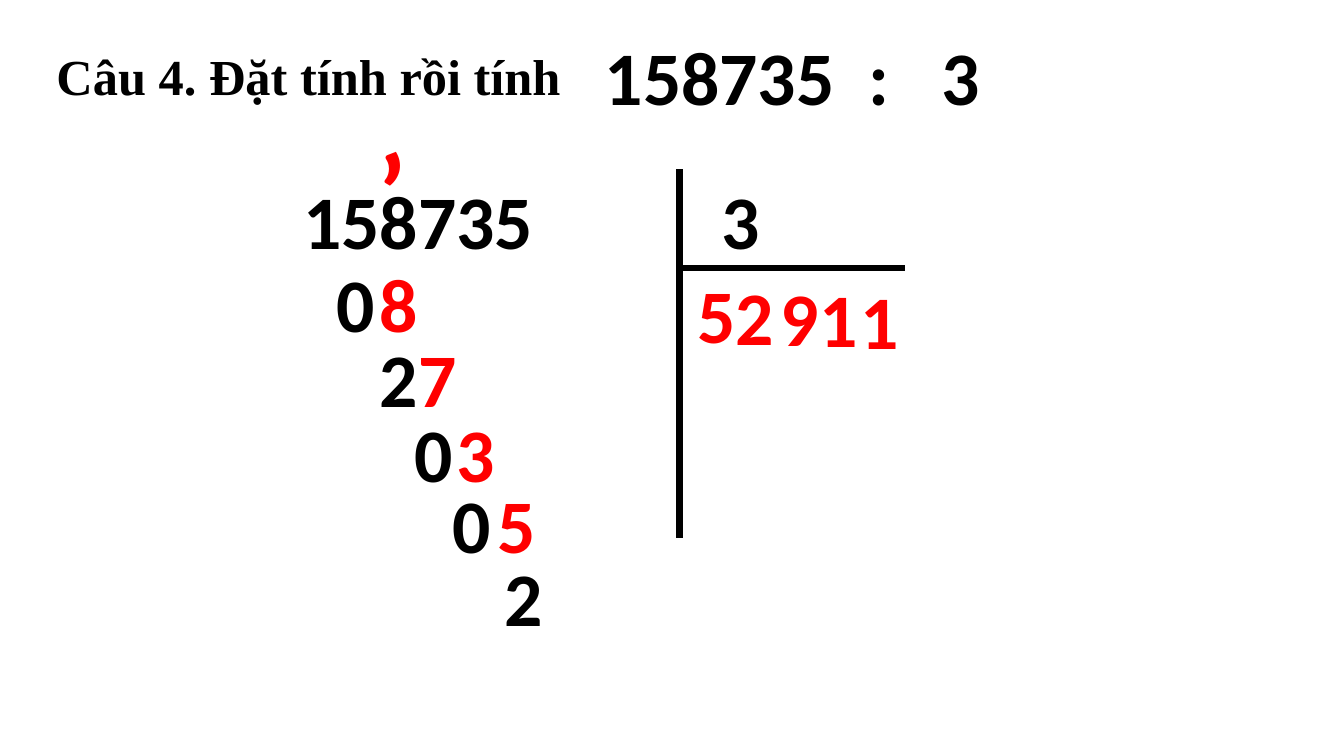
from lxml import etree
from pptx import Presentation
from pptx.dml.color import RGBColor
from pptx.enum.shapes import MSO_CONNECTOR
from pptx.enum.text import MSO_ANCHOR, MSO_AUTO_SIZE, PP_ALIGN
from pptx.oxml.ns import qn
from pptx.util import Inches, Pt

COLORS = {"ink": "000000", "answer": "FF0000"}
BODY_FONT, TITLE_FONT = "Calibri", "Times New Roman"

# Working grid: one column is one digit wide, one row is one division step
LEFT, TOP = 2.91, 2.5
COL, ROW = 0.38, 0.73
BOX_W, BOX_H = 0.74, 1.01

# Each step: row, column of remainder, remainder, column and digit brought down
STEPS = [
    (0, 0.87, "0", 2, "8"),
    (1.02, 2, "2", 3, "7"),
    (2.04, 2.9, "0", 4, "3"),
    (3, 3.9, "0", 5.08, "5"),
    (4, 5.26, "2", None, None),
]
QUOTIENT = [(10.29, "5"), (11.29, "2"), (12.45, "9"), (13.47, "1"), (14.55, "1")]


def format_runs(p, size, color, font=BODY_FONT):
    for r in p.runs:
        r.font.size, r.font.bold, r.font.name = Pt(size), True, font
        r.font.color.rgb = RGBColor.from_string(COLORS[color])


def set_tabs(p, stops):
    tabs = etree.SubElement(p._p.get_or_add_pPr(), qn("a:tabLst"))
    for stop in stops:
        etree.SubElement(tabs, qn("a:tab"), pos=str(Inches(stop)), algn="l")


def add_text(shapes, text, x, y, w=BOX_W, h=BOX_H, size=54, color="ink", tabs=()):
    sp = shapes.add_textbox(Inches(x), Inches(y), Inches(w), Inches(h))
    tf = sp.text_frame
    tf.word_wrap = True
    tf.auto_size = MSO_AUTO_SIZE.SHAPE_TO_FIT_TEXT
    p = tf.paragraphs[0]
    p.text = text
    format_runs(p, size, color)
    if tabs:
        set_tabs(p, tabs)
    return sp


def add_digit(s, digit, col, row, color="ink"):
    add_text(s.shapes, digit, LEFT + col * COL, TOP + row * ROW, color=color)


def add_rule(shapes, x1, y1, x2, y2):
    line = shapes.add_connector(MSO_CONNECTOR.STRAIGHT, *map(Inches, (x1, y1, x2, y2)))
    line.line.width = Pt(4.5)
    line.line.color.rgb = RGBColor.from_string(COLORS["ink"])
    etree.SubElement(line._element.spPr, qn("a:effectLst"))


def set_title(s, text):
    sp = s.shapes.title
    sp.left, sp.top, sp.width, sp.height = map(Inches, (0.46, 0.32, 5.44, 0.93))
    tf = sp.text_frame
    tf.text = text
    tf.word_wrap = True
    tf.auto_size = MSO_AUTO_SIZE.NONE
    tf.vertical_anchor = MSO_ANCHOR.MIDDLE
    p = tf.paragraphs[0]
    p.alignment, p.line_spacing = PP_ALIGN.LEFT, 0.9
    format_runs(p, 36, "ink", TITLE_FONT)


def add_division_frame(s):
    shapes = s.shapes.add_group_shape().shapes
    bar_x, top = 6.74, 1.68
    add_text(shapes, "158735\t3", LEFT, top, w=4.74, tabs=[4.15])
    add_rule(shapes, bar_x, top, bar_x, 5.34)
    add_rule(shapes, bar_x, 2.66, 8.98, 2.66)


def main():
    prs = Presentation()
    prs.slide_width, prs.slide_height = Inches(13.33), Inches(7.5)
    s = prs.slides.add_slide(prs.slide_layouts[5])

    # Question
    set_title(s, "Câu 4. Đặt tính rồi tính")
    add_text(s.shapes, "158735\t:\t3", 5.9, 0.25, w=4.12, tabs=[2.62, 3.34])

    # Division frame, with the mark above the first digits taken
    add_division_frame(s)
    mark = add_text(s.shapes, "‘", 3.41, 0.74, h=1.45, size=80, color="answer")
    mark.rotation = 180

    # Remainders and digits brought down
    for row, col, remainder, next_col, brought_down in STEPS:
        add_digit(s, remainder, col, row)
        if brought_down:
            add_digit(s, brought_down, next_col, row, "answer")

    # Quotient, stepping slightly down
    for i, (col, digit) in enumerate(QUOTIENT):
        add_digit(s, digit, col, 0.15 + 0.02 * i, "answer")

    prs.save("out.pptx")


main()
